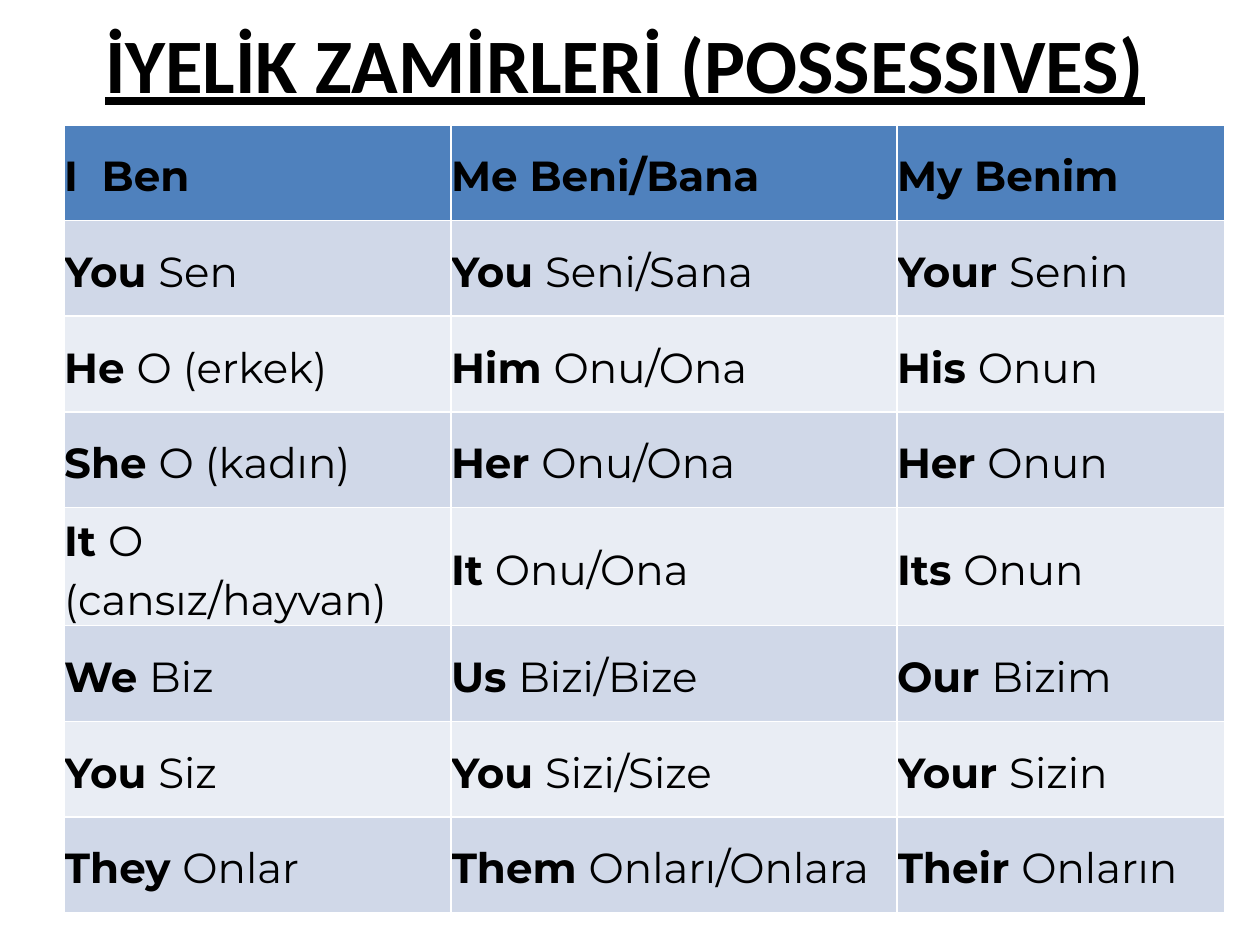
import pptx
import pptx.util
import pptx.dml.color
import pptx.enum.text

Inches = pptx.util.Inches
NO_BREAK_SPACE = " "
HEADER_FILL = "4F81BD"
BAND_FILLS = ("D0D8E8", "E9EDF4")
COLUMN_WIDTHS = (3.07, 3.54, 2.6)
ROW_HEIGHT = 0.76
PRONOUNS = (
    (("I" + NO_BREAK_SPACE, "Ben"), ("Me", "Beni/Bana"), ("My", "Benim")),
    (("You", "Sen"), ("You", "Seni/Sana"), ("Your", "Senin")),
    (("He", "O (erkek)"), ("Him", "Onu/Ona"), ("His", "Onun")),
    (("She", "O (kadın)"), ("Her", "Onu/Ona"), ("Her", "Onun")),
    (("It", "O (cansız/hayvan)"), ("It", "Onu/Ona"), ("Its", "Onun")),
    (("We", "Biz"), ("Us", "Bizi/Bize"), ("Our", "Bizim")),
    (("You", "Siz"), ("You", "Sizi/Size"), ("Your", "Sizin")),
    (("They", "Onlar"), ("Them", "Onları/Onlara"), ("Their", "Onların")),
)


def color(hex_value):
    return pptx.dml.color.RGBColor.from_string(hex_value)


def style_font(font, name, size):
    font.name = name
    font.size = pptx.util.Pt(size)
    font.color.rgb = color("000000")


def add_title(slide, text):
    title = slide.shapes.title
    title.left, title.top = Inches(0.51), Inches(0)
    title.width, title.height = Inches(8.9), Inches(0.99)
    frame = title.text_frame
    frame.text = text
    frame.word_wrap = True
    frame.vertical_anchor = pptx.enum.text.MSO_ANCHOR.MIDDLE
    heading = frame.paragraphs[0]
    heading.alignment = pptx.enum.text.PP_ALIGN.CENTER
    style_font(heading.font, "Calibri", 44)
    heading.font.bold = True
    heading.font.underline = True


def fill_cell(cell, english, turkish, fill, is_header):
    cell.fill.solid()
    cell.fill.fore_color.rgb = color(fill)
    cell.vertical_anchor = pptx.enum.text.MSO_ANCHOR.MIDDLE
    cell.margin_left = cell.margin_right = 0
    cell.margin_top = cell.margin_bottom = 0
    entry = cell.text_frame.paragraphs[0]
    entry.line_spacing = 1.15
    parts = [(english + NO_BREAK_SPACE, True), (turkish, is_header)]
    if is_header:
        parts = [(english + NO_BREAK_SPACE + turkish, True)]
    for text, bold in parts:
        word = entry.add_run()
        word.text = text
        style_font(word.font, "Montserrat", 24)
        word.font.bold = bold


def add_pronoun_table(slide):
    pronoun_table = slide.shapes.add_table(
        len(PRONOUNS), len(COLUMN_WIDTHS), Inches(0.51), Inches(0.99),
        Inches(sum(COLUMN_WIDTHS)), Inches(ROW_HEIGHT * len(PRONOUNS))).table
    for column, width in zip(pronoun_table.columns, COLUMN_WIDTHS):
        column.width = Inches(width)
    for row_index, forms in enumerate(PRONOUNS):
        pronoun_table.rows[row_index].height = Inches(ROW_HEIGHT)
        is_header = row_index == 0
        fill = HEADER_FILL if is_header else BAND_FILLS[(row_index - 1) % 2]
        for column_index, (english, turkish) in enumerate(forms):
            cell = pronoun_table.cell(row_index, column_index)
            fill_cell(cell, english, turkish, fill, is_header)


def main():
    presentation = pptx.Presentation()
    presentation.slide_width = Inches(10)
    presentation.slide_height = Inches(7.5)
    slide = presentation.slides.add_slide(presentation.slide_layouts[5])
    add_title(slide, "İYELİK ZAMİRLERİ (POSSESSIVES)")
    add_pronoun_table(slide)
    presentation.save("out.pptx")


if __name__ == "__main__":
    main()
